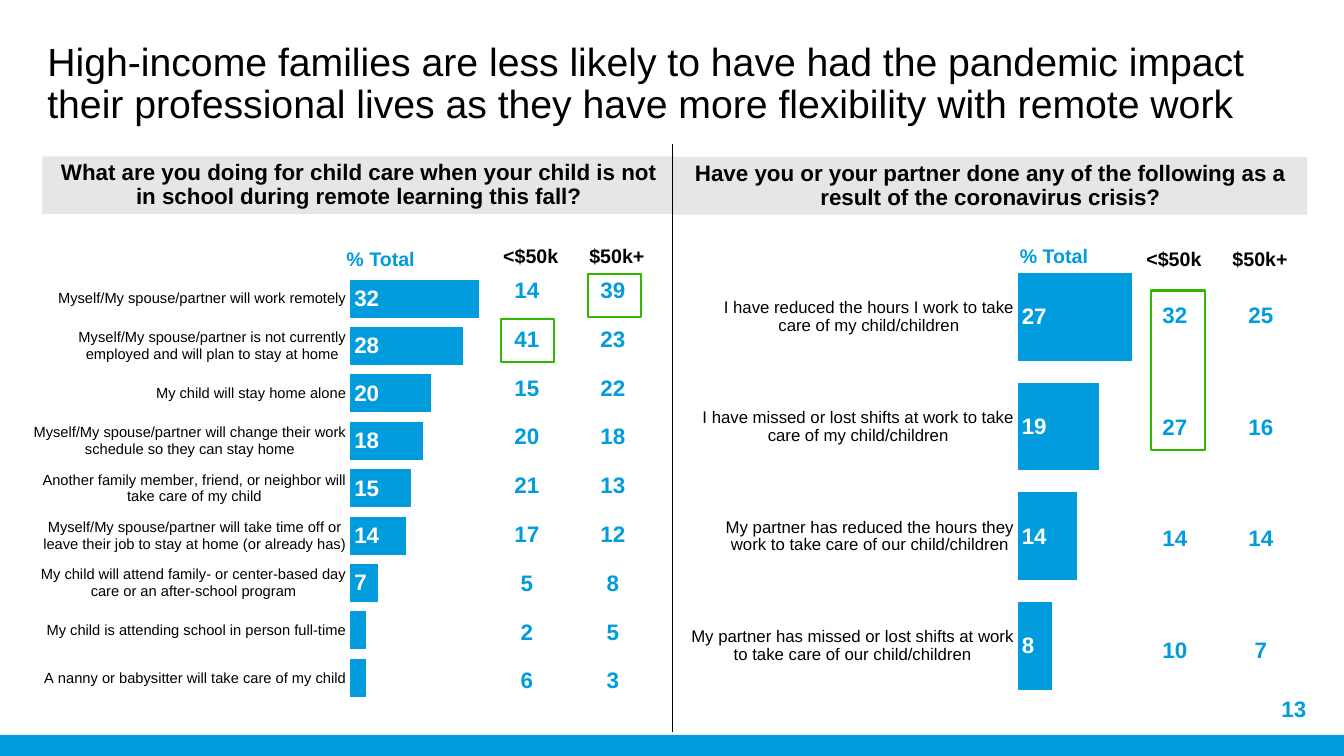
from lxml import etree
from pptx import Presentation
from pptx import util as u
from pptx.chart import data as chart_data
from pptx.dml.color import RGBColor
from pptx.enum import chart as ch, shapes, text
from pptx.oxml import parse_xml
from pptx.oxml.ns import nsdecls, qn

COLORS = {"blue": "009CDE", "gray": "E6E6E6", "green": "30B700",
          "black": "000000", "white": "FFFFFF"}
FONT = "Arial"
NO_GRID_STYLE = "{2D5ABB26-0587-4C30-8999-92F81FD0307C}"
ALIGN, ANCHOR = text.PP_ALIGN, text.MSO_ANCHOR


def color(name):
    return RGBColor.from_string(COLORS[name])


def set_font(font, size, name, bold=False):
    font.name, font.size, font.bold = FONT, u.Pt(size), bold
    font.color.rgb = color(name)


def write(frame, words, size=16, tone="blue", bold=True, align=ALIGN.LEFT,
          anchor=ANCHOR.TOP, spacing=None, before=None):
    frame.word_wrap = True
    frame.vertical_anchor = anchor
    para = frame.paragraphs[0]
    para.alignment = align
    para.line_spacing = spacing
    if before is not None:
        para.space_before = u.Pt(before)
    span = para.add_run()
    span.text = words
    set_font(span.font, size, tone, bold)


def cm(*lengths):
    return [u.Cm(length) for length in lengths]


class SlideBuilder:
    def __init__(self, deck):
        self.page = deck.slides.add_slide(deck.slide_layouts[5])

    def title(self, words, *place):
        box = self.page.shapes.title
        box.left, box.top, box.width, box.height = cm(*place)
        box.text_frame.auto_size = text.MSO_AUTO_SIZE.NONE
        write(box.text_frame, words, size=28, tone="black", bold=False, spacing=0.9)

    def rectangle(self, *place, fill=None, outline=None):
        box = self.page.shapes.add_shape(shapes.MSO_SHAPE.RECTANGLE, *cm(*place))
        box.shadow.inherit = False
        if fill:
            box.fill.solid()
            box.fill.fore_color.rgb = color(fill)
        else:
            box.fill.background()
        if outline:
            box.line.color.rgb = color(outline)
            box.line.width = u.Pt(1.5)
        else:
            box.line.fill.background()
        return box

    def question(self, words, *place):
        band = self.rectangle(*place, fill="gray")
        write(band.text_frame, words, tone="black", align=ALIGN.CENTER,
              anchor=ANCHOR.MIDDLE, spacing=0.9, before=10)

    def label(self, words, *place, inset=None, **style):
        frame = self.page.shapes.add_textbox(*cm(*place)).text_frame
        if inset is not None:
            frame.margin_left = frame.margin_right = u.Cm(inset)
            frame.margin_top = frame.margin_bottom = u.Cm(inset)
        write(frame, words, **style)

    def table(self, rows, *place, **style):
        table = self.page.shapes.add_table(len(rows), len(rows[0]), *cm(*place)).table
        table.first_row = table.horz_banding = False
        table._tbl.tblPr.find(qn("a:tableStyleId")).text = NO_GRID_STYLE
        for r, row in enumerate(rows):
            for c, value in enumerate(row):
                cell = table.cell(r, c)
                cell.fill.background()
                write(cell.text_frame, str(value), align=ALIGN.CENTER, **style)
                cell.vertical_anchor = style["anchor"]

    def bar_chart(self, answers, *place, size, plot_area, unlabeled=()):
        data = chart_data.CategoryChartData()
        data.categories = list(answers)
        data.add_series("Series 1", list(answers.values()))
        chart = self.page.shapes.add_chart(ch.XL_CHART_TYPE.BAR_CLUSTERED,
                                           *cm(*place), data).chart
        chart.has_legend = chart.has_title = False
        set_font(chart.font, 16, "black", True)

        # Axes
        values, names = chart.value_axis, chart.category_axis
        values.minimum_scale, values.maximum_scale = 0, 80
        values.has_major_gridlines = values.visible = False
        names.reverse_order = True
        names.major_tick_mark = ch.XL_TICK_MARK.NONE
        names.format.line.fill.background()
        set_font(names.tick_labels.font, size, "black")

        # Bars and their labels
        plot = chart.plots[0]
        plot.gap_width, plot.vary_by_categories = 25, False
        series = plot.series[0]
        series.format.fill.solid()
        series.format.fill.fore_color.rgb = color("blue")
        labels = series.data_labels
        labels.show_value = True
        labels.position = ch.XL_LABEL_POSITION.INSIDE_BASE
        set_font(labels.font, 16, "white", True)
        for order, index in enumerate(unlabeled):
            labels._element.insert(order, parse_xml(
                f'<c:dLbl {nsdecls("c")}><c:idx val="{index}"/>'
                '<c:delete val="1"/></c:dLbl>'))

        # Inner plot area as shares of the chart
        area = chart._chartSpace.chart.plotArea
        for old in area.findall(qn("c:layout")):
            area.remove(old)
        layout = etree.Element(qn("c:layout"))
        manual = etree.SubElement(layout, qn("c:manualLayout"))
        settings = [("layoutTarget", "inner"), ("xMode", "edge"), ("yMode", "edge")]
        for tag, value in settings + list(zip("xywh", plot_area)):
            etree.SubElement(manual, qn(f"c:{tag}")).set("val", str(value))
        area.insert(0, layout)

    def divider(self, x, top, bottom):
        line = self.page.shapes.add_connector(shapes.MSO_CONNECTOR.STRAIGHT,
                                              *cm(x, top, x, bottom))
        line.line.color.rgb = color("black")
        line.line.width = u.Pt(0.5)
        etree.SubElement(line._element.spPr, qn("a:effectLst"))


CHILD_CARE = {
    "Myself/My spouse/partner will work remotely": 32,
    "Myself/My spouse/partner is not currently employed and will plan to stay at home": 28,
    "My child will stay home alone": 20,
    "Myself/My spouse/partner will change their work schedule so they can stay home": 18,
    "Another family member, friend, or neighbor will take care of my child": 15,
    "Myself/My spouse/partner will take time off or leave their job to stay at home (or already has)": 14,
    "My child will attend family- or center-based day care or an after-school program": 7,
    "My child is attending school in person full-time": 4,
    "A nanny or babysitter will take care of my child": 4,
}
CARE_BY_INCOME = [(14, 39), (41, 23), (15, 22), (20, 18), (21, 13),
                  (17, 12), (5, 8), (2, 5), (6, 3)]
WORK_CHANGES = {
    "I have reduced the hours I work to take care of my child/children": 27,
    "I have missed or lost shifts at work to take care of my child/children": 19,
    "My partner has reduced the hours they work to take care of our child/children": 14,
    "My partner has missed or lost shifts at work to take care of our child/children": 8,
}
WORK_BY_INCOME = [(32, 25), (27, 16), (14, 14), (10, 7)]
INCOME_HEADER = [("<$50k", "$50k+")]


def main():
    deck = Presentation()
    deck.slide_width, deck.slide_height = cm(33.87, 19.05)
    slide = SlideBuilder(deck)
    header = dict(size=14, tone="black", anchor=ANCHOR.BOTTOM)

    # Frame of the slide
    slide.rectangle(0, 18.52, 33.87, 0.53, fill="blue")
    slide.title("High-income families are less likely to have had the pandemic impact "
                "their professional lives as they have more flexibility with remote work",
                0.94, 0.94, 31.95, 2.87)
    slide.label("13", 25.3, 17.35, 7.62, 1.02, inset=0, align=ALIGN.RIGHT,
                anchor=ANCHOR.MIDDLE)

    # Left half: child care
    slide.question("What are you doing for child care when your child is not in school "
                   "during remote learning this fall?", 1.07, 3.94, 15.95, 1.45)
    slide.bar_chart(CHILD_CARE, 0.74, 6.12, 16.18, 11.56, size=10.5,
                    plot_area=(0.5, 0.07, 0.5, 0.93), unlabeled=(7, 8))
    slide.label("% Total", 8.48, 6.1, 2.97, 0.86, size=14)
    slide.table(CARE_BY_INCOME, 12.19, 6.71, 4.34, 11.07, anchor=ANCHOR.MIDDLE)
    slide.table(INCOME_HEADER, 12.29, 5.66, 4.34, 1.22, **header)

    # Right half: work changes
    slide.question("Have you or your partner done any of the following as a result of "
                   "the coronavirus crisis?", 16.97, 3.96, 15.98, 1.45)
    slide.bar_chart(WORK_CHANGES, 17.42, 5.77, 16.79, 11.89, size=12,
                    plot_area=(0.49, 0.07, 0.51, 0.93))
    slide.label("% Total", 25.45, 6.02, 2.84, 0.86, size=14)
    slide.table(WORK_BY_INCOME, 28.52, 6.55, 4.34, 11.25, anchor=ANCHOR.MIDDLE)
    slide.table(INCOME_HEADER, 28.5, 5.64, 4.34, 1.3, **header)

    # Divider and highlights
    slide.divider(16.94, 3.63, 18.44)
    for left, top, height in [(29.01, 7.32, 4.01), (12.62, 8.05, 1.07),
                              (14.81, 6.91, 1.07)]:
        slide.rectangle(left, top, 1.35, height, outline="green")

    deck.save("out.pptx")


if __name__ == "__main__":
    main()
